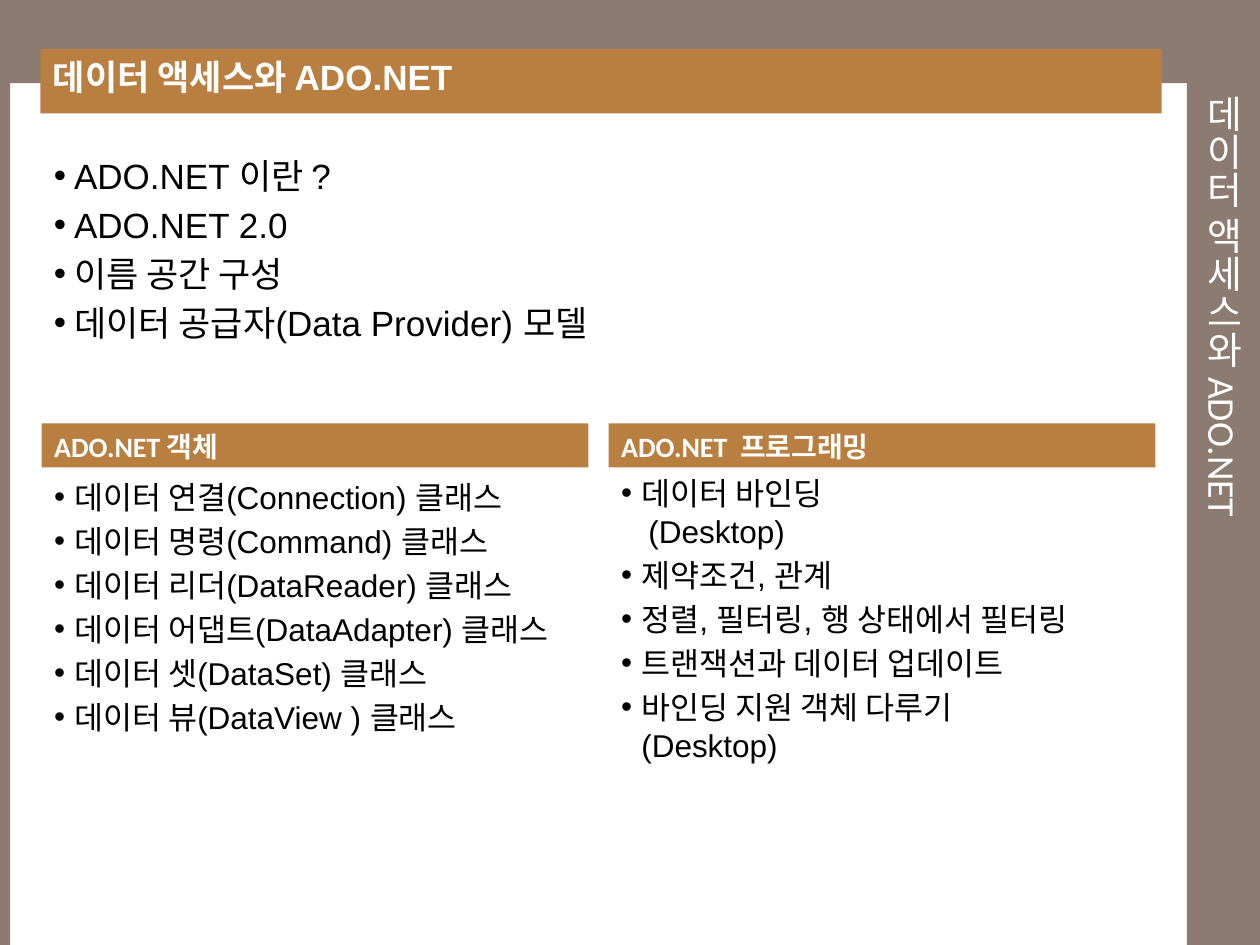
"""Build the ADO.NET data access overview slide."""
from dataclasses import dataclass

from lxml.etree import SubElement
from pptx import Presentation
from pptx.dml.color import RGBColor
from pptx.enum.shapes import MSO_SHAPE as Preset
from pptx.enum.text import MSO_ANCHOR as Anchor, MSO_AUTO_SIZE as AutoSize, PP_ALIGN as Align
from pptx.oxml.ns import qn
from pptx.util import Inches, Pt


@dataclass(frozen=True)
class Theme:
    frame: RGBColor = RGBColor(0x8C, 0x7B, 0x70)
    accent: RGBColor = RGBColor(0xB8, 0x7F, 0x40)
    light: RGBColor = RGBColor(0xFF, 0xFF, 0xFF)
    dark: RGBColor = RGBColor(0, 0, 0)
    side: float = 21.6
    large: float = 20
    medium: float = 18
    small: float = 16
    body_font: str = "Arial"
    heading_font: str = "Calibri"


theme = Theme()


def place(part, left, top, width, height, fill=None):
    part.left, part.top = Inches(left), Inches(top)
    part.width, part.height = Inches(width), Inches(height)
    if fill is not None:
        part.fill.solid()
        part.fill.fore_color.rgb = fill


def write(part, lines, size, font, color, bold=False, bullets=False):
    frame = part.text_frame
    frame.word_wrap = True
    frame.auto_size = AutoSize.NONE
    frame.vertical_anchor = Anchor.TOP
    frame.text = "\n".join(lines)
    for paragraph in frame.paragraphs:
        paragraph.alignment = Align.LEFT
        paragraph.space_before = Pt(size * 0.2)
        paragraph.font.size = Pt(size)
        paragraph.font.name = font
        paragraph.font.bold = bold
        paragraph.font.color.rgb = color
        properties = paragraph._p.get_or_add_pPr()
        hanging = Inches(0.16) if bullets else 0
        properties.set("marL", str(hanging))
        properties.set("indent", str(-hanging))
        marks = [("a:buFont", "typeface", font), ("a:buChar", "char", "•")]
        for tag, attribute, value in marks if bullets else [("a:buNone", None, None)]:
            mark = SubElement(properties, qn(tag))
            if attribute:
                mark.set(attribute, value)
            properties.insert_element_before(mark, "a:tabLst", "a:defRPr", "a:extLst")


deck = Presentation()
deck.slide_width, deck.slide_height = Inches(10), Inches(7.5)
slide = deck.slides.add_slide(deck.slide_layouts[4])
shapes = slide.shapes

borders = [(9.42, 0, 0.58, 7.5), (0, 0, 0.08, 7.5), (0, 0, 10, 0.66)]
for depth, box in enumerate(borders, start=2):
    border = shapes.add_shape(Preset.RECTANGLE, *map(Inches, box))
    border.shadow.inherit = False
    border.fill.solid()
    border.fill.fore_color.rgb = theme.frame
    border.line.fill.background()
    shapes._spTree.insert(depth, border._element)

subject = "데이터 액세스와 ADO.NET"
side_label = shapes.add_textbox(*map(Inches, (9.42, 0.66, 0.58, 6.54)))
write(side_label, [subject], theme.side, theme.heading_font, theme.light)
side_label.text_frame.vertical_anchor = Anchor.MIDDLE
side_label.text_frame._txBody.bodyPr.set("vert", "eaVert")
side_label.text_frame.paragraphs[0].alignment = Align.CENTER

place(shapes.title, 0.32, 0.39, 8.9, 0.51, theme.accent)
write(shapes.title, [subject], theme.large, theme.body_font, theme.light, bold=True)

topics = ["ADO.NET 이란 ?", "ADO.NET 2.0", "이름 공간 구성", "데이터 공급자(Data Provider) 모델"]
overview = shapes.add_textbox(*map(Inches, (0.33, 1.18, 8.83, 2.13)))
write(overview, topics, theme.large, theme.body_font, theme.dark, bullets=True)

classes = ["연결(Connection)", "명령(Command)", "리더(DataReader)",
           "어댑트(DataAdapter)", "셋(DataSet)", "뷰(DataView )"]
programming = ["데이터 바인딩\v (Desktop)", "제약조건, 관계", "정렬, 필터링, 행 상태에서 필터링",
               "트랜잭션과 데이터 업데이트", "바인딩 지원 객체 다루기\v(Desktop)"]
columns = [
    (1, 0.33, 3.74, 4.44, "ADO.NET 객체", [f"데이터 {name} 클래스" for name in classes]),
    (3, 4.83, 3.71, 4.34, "ADO.NET  프로그래밍", programming),
]
for index, left, list_top, list_width, heading_text, items in columns:
    heading, details = slide.placeholders[index], slide.placeholders[index + 1]
    place(heading, left, 3.36, 4.34, 0.35, theme.accent)
    write(heading, [heading_text], theme.small, theme.heading_font, theme.light, bold=True)
    place(details, left, list_top, list_width, 3.24)
    write(details, items, theme.medium, theme.body_font, theme.dark, bullets=True)

deck.save("out.pptx")
